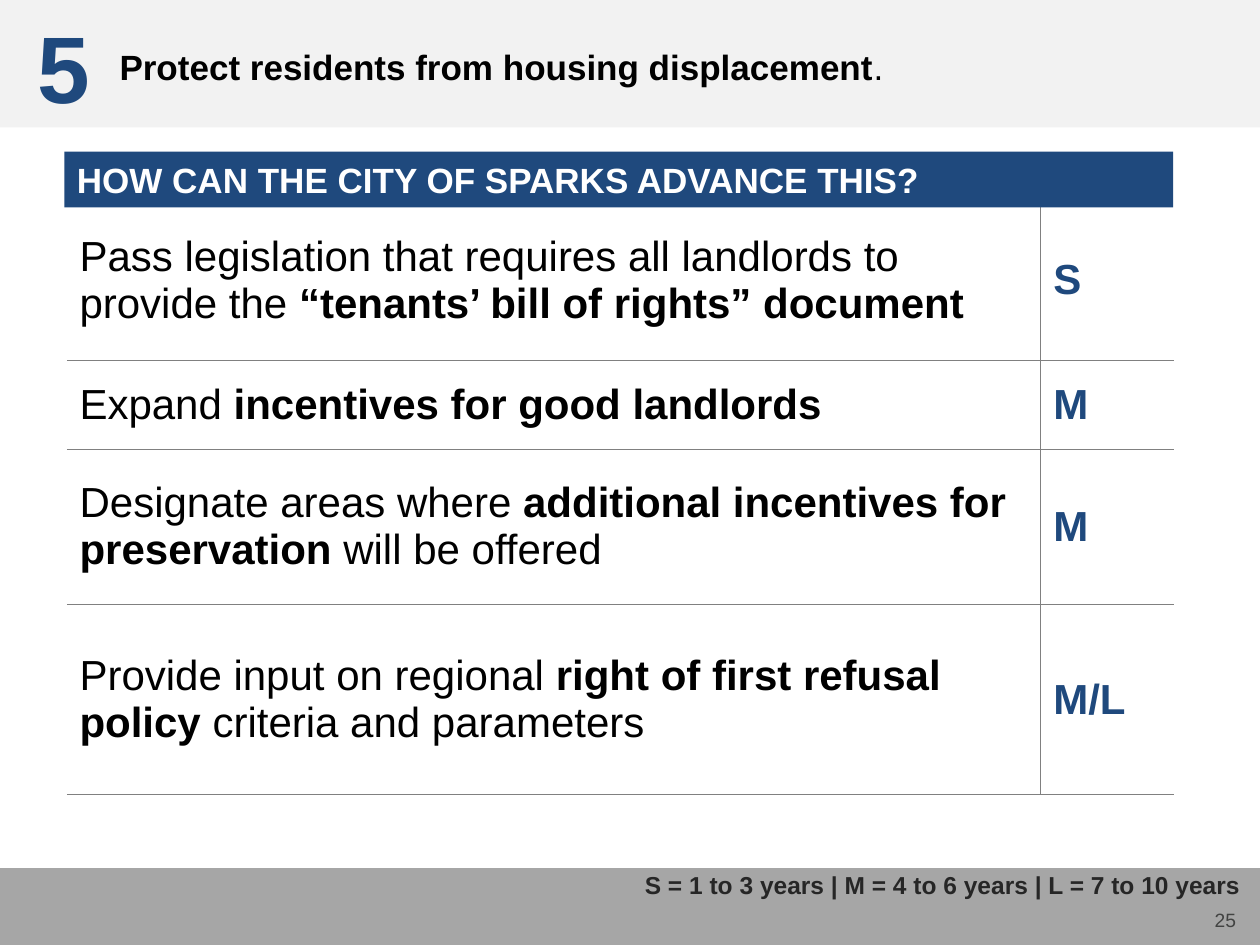
from lxml.etree import SubElement
from pptx import Presentation
from pptx.dml.color import RGBColor
from pptx.enum.shapes import MSO_SHAPE
from pptx.enum.text import MSO_ANCHOR, PP_ALIGN
from pptx.oxml.ns import qn
from pptx.util import Cm, Pt

NAVY, BLACK, WHITE, GREY = "1F497D", "000000", "FFFFFF", "808080"
BANDS = [
    ((0, 17.5, 25.4, 1.55), "A6A6A6"),
    ((0, 0, 25.4, 2.57), "F2F2F2"),
]
TITLE = [("Protect residents from housing displacement", True), (".", False)]
LABELS = [
    ((2.16, 0.79, 22.76, 1.12), TITLE, 20, BLACK),
    ((0.51, 0.05, 1.6, 2.57), [("5", True)], 54, NAVY),
    ((12.75, 17.42, 14.66, 0.86),
     [("S = 1 to 3 years | M = 4 to 6 years | L = 7 to 10 years", True)],
     14, "262626"),
]
PAGE = ((19, 17.75, 5.92, 1.02), [("25", False)], 11, "424342")
HEAD = ((1.3, 3.06, 22.35, 1.12),
        [("HOW CAN THE CITY OF SPARKS ADVANCE THIS?", True)], 20, WHITE)
STEPS = [
    (3.22, [("Pass legislation that requires all landlords to provide the ", False),
            ("“tenants’ bill of rights” document", True)], "S"),
    (1.8, [("Expand ", False), ("incentives for good landlords", True)], "M"),
    (3.12, [("Designate areas where ", False),
            ("additional incentives for preservation ", True),
            ("will be offered", False)], "M"),
    (3.84, [("Provide input on regional ", False),
            ("right of first refusal policy", True),
            (" criteria and parameters", False)], "M/L"),
]
COLS = (19.63, 2.68)
LEFT, TOP = 1.35, 4.04


def tint(code):
    """Turn a hex string into a colour."""
    return RGBColor.from_string(code)


def write(frame, runs, size, color):
    """Add the runs to the first paragraph of a frame."""
    para = frame.paragraphs[0]
    para.alignment = PP_ALIGN.LEFT
    for text, bold in runs:
        run = para.add_run()
        run.text = text
        font = run.font
        font.name, font.size, font.bold = "Arial", Pt(size), bold
        font.color.rgb = tint(color)
    return para


def block(slide, box, color):
    """Draw a plain filled rectangle."""
    shape = slide.shapes.add_shape(MSO_SHAPE.RECTANGLE, *map(Cm, box))
    shape.shadow.inherit = False
    shape.fill.solid()
    shape.fill.fore_color.rgb = tint(color)
    shape.line.fill.background()
    return shape


def label(slide, box, runs, size, color):
    """Place a text box and return its frame."""
    frame = slide.shapes.add_textbox(*map(Cm, box)).text_frame
    frame.word_wrap = True
    write(frame, runs, size, color)
    return frame


def edge(cell, sides):
    """Rule the given sides of a cell and clear the others."""
    props = cell._tc.get_or_add_tcPr()
    for side in "LRTB":
        line = SubElement(props, qn("a:ln" + side), w=str(Pt(0.5)))
        if side in sides:
            fill = SubElement(line, qn("a:solidFill"))
            SubElement(fill, qn("a:srgbClr"), val=GREY)
        else:
            SubElement(line, qn("a:noFill"))


def grid(slide):
    """Build the table of steps and time spans."""
    high = sum(step[0] for step in STEPS)
    box = map(Cm, (LEFT, TOP, sum(COLS), high))
    table = slide.shapes.add_table(len(STEPS), len(COLS), *box).table
    table.first_row = table.horz_banding = False
    for col, width in zip(table.columns, COLS):
        col.width = Cm(width)
    for num, (tall, runs, span) in enumerate(STEPS):
        table.rows[num].height = Cm(tall)
        parts = [(runs, BLACK, "R"), ([(span, True)], NAVY, "L")]
        for col, (text, color, side) in enumerate(parts):
            cell = table.cell(num, col)
            edge(cell, side + ("TB" if num else "B"))
            cell.fill.background()
            cell.vertical_anchor = MSO_ANCHOR.MIDDLE
            write(cell.text_frame, text, 24, color)


def main():
    """Build and save the slide."""
    deck = Presentation()
    deck.slide_width, deck.slide_height = Cm(25.4), Cm(19.05)
    slide = deck.slides.add_slide(deck.slide_layouts[6])
    for box, color in BANDS:
        block(slide, box, color)
    for item in LABELS:
        label(slide, *item)
    page = label(slide, *PAGE)
    page.margin_left = page.margin_right = 0
    page.margin_top = page.margin_bottom = 0
    page.vertical_anchor = MSO_ANCHOR.BOTTOM
    page.paragraphs[0].alignment = PP_ALIGN.RIGHT
    grid(slide)
    box, *text = HEAD
    write(block(slide, box, NAVY).text_frame, *text)
    deck.save("out.pptx")


if __name__ == "__main__":
    main()
